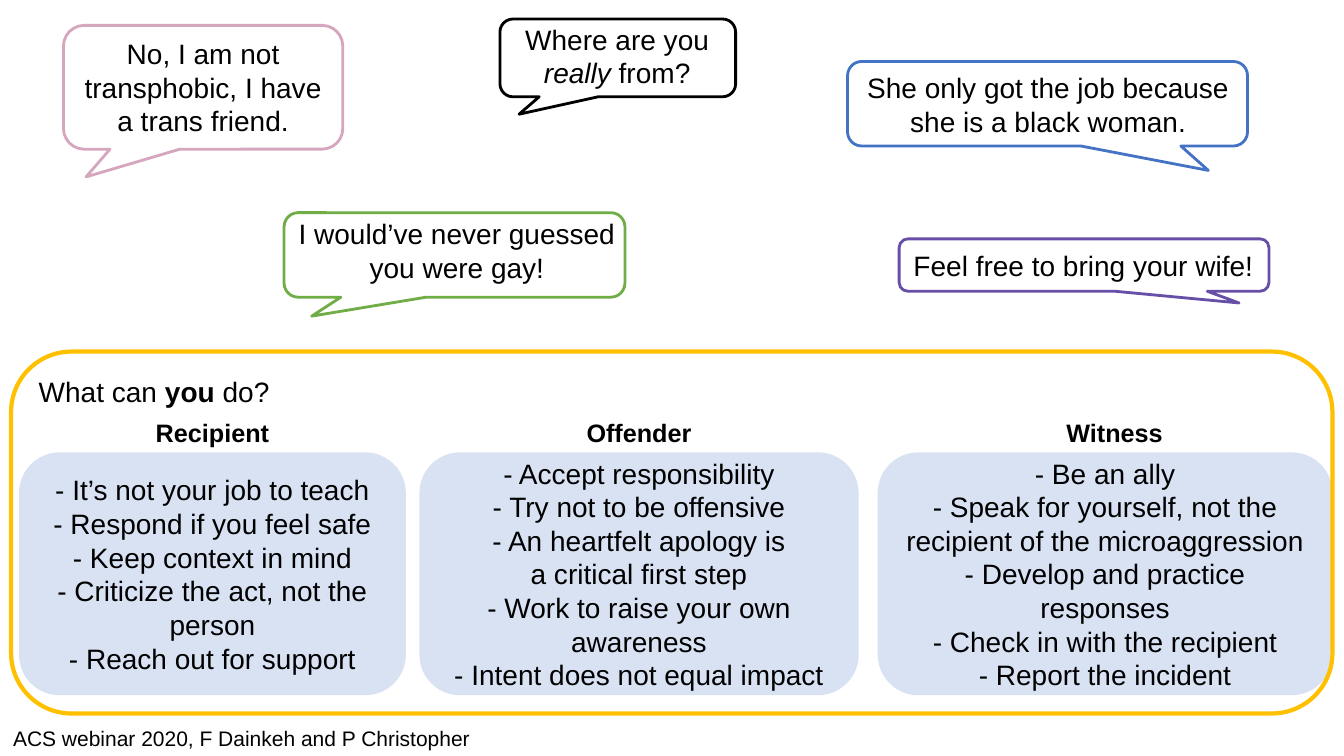
from pptx import Presentation
from pptx.dml.color import RGBColor
from pptx.enum.shapes import MSO_SHAPE
from pptx.enum.text import MSO_ANCHOR, PP_ALIGN
from pptx.util import Cm, Pt

BLACK = RGBColor(0x00, 0x00, 0x00)
PALE_BLUE = RGBColor(0xD8, 0xE2, 0xF3)
AMBER = RGBColor(0xFF, 0xC0, 0x00)
PINK = RGBColor(0xD5, 0xA6, 0xBD)
GREEN = RGBColor(0x70, 0xAD, 0x47)
BLUE = RGBColor(0x44, 0x72, 0xC4)
PURPLE = RGBColor(0x67, 0x4E, 0xA7)

ROUND_RECT = MSO_SHAPE.ROUNDED_RECTANGLE
CALLOUT = MSO_SHAPE.ROUNDED_RECTANGULAR_CALLOUT
LEFT, CENTER = PP_ALIGN.LEFT, PP_ALIGN.CENTER
TOP, MIDDLE = MSO_ANCHOR.TOP, MSO_ANCHOR.MIDDLE

FONT = "Arial"
CORNER = 0.167

# Box of the bubble, box of its words relative to the bubble, tail tip, outline, words
BUBBLES = [
    ((7.16, 5.36, 8.59, 2.13), (0.1, -0.03, 8.51, 1.96), (-0.419, 0.724), GREEN,
     "I would’ve never guessed you were gay!"),
    ((21.36, 1.55, 10.08, 2.13), (0.18, 0.1, 9.75, 1.96), (0.402, 0.789), BLUE,
     "She only got the job because she is a black woman."),
    ((22.66, 6.02, 9.32, 1.32), (-1.22, 0.1, 11.73, 1.12), (0.419, 0.724), PURPLE,
     "Feel free to bring your wife!"),
    ((12.6, 0.48, 5.94, 1.96), (0.15, -0.05, 5.61, 1.96), (-0.419, 0.724), BLACK,
     [("Where are you ", ""), ("really", "italic"), (" from?", "")]),
    ((1.6, 0.64, 7.04, 3.12), (0, 0.15, 7.04, 2.82), (-0.419, 0.724), PINK,
     "No, I am not transphobic, I have a trans friend."),
]

# Heading, heading shift from the panel's centre, panel left in the frame, panel width, advice
ROLES = [
    ("Recipient", 0, 0.2, 9.75, [
        "- It’s not your job to teach",
        "- Respond if you feel safe",
        "- Keep context in mind",
        "- Criticize the act, not the person",
        "- Reach out for support"]),
    ("Offender", 0, 10.29, 11.07, [
        "- Accept responsibility",
        "- Try not to be offensive",
        "- An heartfelt apology is",
        "a critical first step",
        "- Work to raise your own awareness",
        "- Intent does not equal impact"]),
    ("Witness", 0.24, 21.84, 11.46, [
        "- Be an ally",
        "- Speak for yourself, not the recipient of the microaggression",
        "- Develop and practice responses",
        "- Check in with the recipient",
        "- Report the incident"]),
]


def write(sp, paragraphs, size=20, bold=False, align=CENTER, anchor=TOP, inset=(0.25, 0.13)):
    """Fill a shape; a paragraph is a string or a list of (text, style) runs."""
    tf = sp.text_frame
    tf.word_wrap = True
    tf.vertical_anchor = anchor
    tf.margin_left = tf.margin_right = Cm(inset[0])
    tf.margin_top = tf.margin_bottom = Cm(inset[1])
    for i, runs in enumerate(paragraphs):
        p = tf.add_paragraph() if i else tf.paragraphs[0]
        p.alignment = align
        for text, style in [(runs, "")] if isinstance(runs, str) else runs:
            r = p.add_run()
            r.text = text
            r.font.name = FONT
            r.font.size = Pt(size)
            r.font.color.rgb = BLACK
            r.font.bold = bold or style == "bold"
            r.font.italic = style == "italic"


def add_text(s, box, paragraphs, **style):
    write(s.shapes.add_textbox(*map(Cm, box)), paragraphs, **style)


def add_outline(s, kind, box, fill=None, line=None, width=2):
    sp = s.shapes.add_shape(kind, *map(Cm, box))
    sp.shadow.inherit = False
    if fill is None:
        sp.fill.background()
    else:
        sp.fill.solid()
        sp.fill.fore_color.rgb = fill
    if line is None:
        sp.line.fill.background()
    else:
        sp.line.color.rgb = line
        sp.line.width = Pt(width)
    return sp


def add_bubble(s, box, words_box, tail, color, words):
    sp = add_outline(s, CALLOUT, box, line=color)
    for i, value in enumerate((*tail, CORNER)):
        sp.adjustments[i] = value
    dx, dy, w, h = words_box
    add_text(s, (box[0] + dx, box[1] + dy, w, h), [words])


def add_role(s, box, heading, shift, advice):
    """Heading above a filled panel of advice."""
    x, y, w, h = box
    head_w, head_h = 8.13, 1.02
    panel = add_outline(s, ROUND_RECT, (x, y + head_h, w, h - head_h), fill=PALE_BLUE)
    panel.adjustments[0] = CORNER
    write(panel, advice, anchor=MIDDLE)
    add_text(s, (x + (w - head_w) / 2 + shift, y, head_w, head_h), [heading],
             size=18, bold=True)


def add_advice(s, box):
    x, y, w, h = box
    for heading, shift, left, width, advice in ROLES:
        add_role(s, (x + left, y + 1.52, width, 7.14), heading, shift, advice)
    frame = add_outline(s, ROUND_RECT, box, line=AMBER, width=3)
    frame.adjustments[0] = CORNER
    write(frame, [[("What can ", ""), ("you", "bold"), (" do?", "")]], align=LEFT)


def main():
    prs = Presentation()
    prs.slide_width, prs.slide_height = Cm(33.87), Cm(19.05)
    s = prs.slides.add_slide(prs.slide_layouts[6])
    for bubble in BUBBLES:
        add_bubble(s, *bubble)
    add_advice(s, (0.28, 8.86, 33.3, 9.12))
    add_text(s, (0, 17.96, 14.22, 1.09), ["ACS webinar 2020, F Dainkeh and P Christopher"],
             size=15, align=LEFT, inset=(0.33, 0.33))
    prs.save("out.pptx")


if __name__ == "__main__":
    main()
